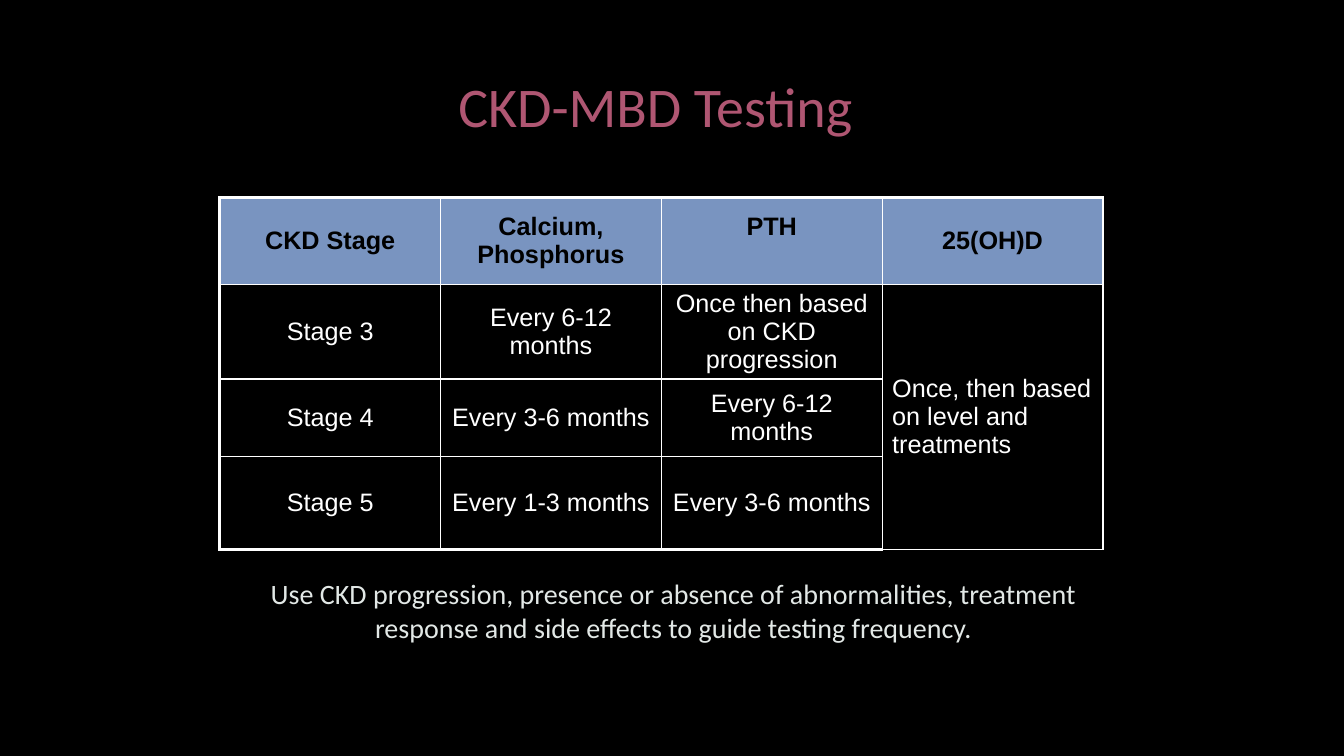
"""Build a slide with a table of CKD-MBD testing intervals."""
import dataclasses

import pptx
import pptx.dml.color
import pptx.enum.text
import pptx.oxml
import pptx.oxml.ns
import pptx.util

Inches = pptx.util.Inches
Pt = pptx.util.Pt
Align = pptx.enum.text.PP_ALIGN
Anchor = pptx.enum.text.MSO_ANCHOR


@dataclasses.dataclass(frozen=True)
class Theme:
    """Hold the colours, fonts and type sizes of the slide."""
    background: str = "000000"
    title: str = "AF5672"
    header_fill: str = "7994C0"
    header_text: str = "000000"
    cell_text: str = "FFFFFF"
    border: str = "FFFFFF"
    note: str = "E2E8E6"
    text_font: str = "Calibri"
    table_font: str = "Arial"
    title_size: int = 40
    table_size: int = 18
    note_size: int = 20
    outer_line: float = 2.25
    inner_line: float = 1


THEME = Theme()
ROWS = [
    ["CKD Stage", "Calcium, Phosphorus", "PTH", "25(OH)D"],
    ["Stage 3", "Every 6-12 months", "Once then based on CKD progression",
     "Once, then based on level and treatments"],
    ["Stage 4", "Every 3-6 months", "Every 6-12 months", ""],
    ["Stage 5", "Every 1-3 months", "Every 3-6 months", ""],
]
ROW_HEIGHTS = [0.86, 0.91, 0.77, 0.92]
COLUMN_WIDTH = 2.19
NOTE = ("Use CKD progression, presence or absence of abnormalities, "
        "treatment response and side effects to guide testing frequency.")


def set_attributes(target, values):
    """Set each named value on the target."""
    for name, value in values.items():
        setattr(target, name, value)


def rgb(colour):
    """Turn a hex string into a colour."""
    return pptx.dml.color.RGBColor.from_string(colour)


def write_text(frame, text, font, size, colour, bold=False, align=Align.CENTER):
    """Write one formatted paragraph into a text frame."""
    frame.word_wrap = True
    paragraph = frame.paragraphs[0]
    paragraph.text = text
    paragraph.alignment = align
    set_attributes(paragraph.font, {"name": font, "size": Pt(size), "bold": bold})
    paragraph.font.color.rgb = rgb(colour)


def place(shape, left, top, width, height):
    """Set the position and size of a shape in inches."""
    set_attributes(shape, {"left": Inches(left), "top": Inches(top),
                           "width": Inches(width), "height": Inches(height)})


def add_title(slide, text):
    """Fill and place the title placeholder."""
    title = slide.shapes.title
    place(title, 2.25, 0.42, 8.5, 1.25)
    title.text_frame.vertical_anchor = Anchor.MIDDLE
    write_text(title.text_frame, text, THEME.text_font, THEME.title_size, THEME.title)


def add_note(slide, text):
    """Add the note below the table."""
    note = slide.shapes.add_textbox(*map(Inches, (2.43, 5.67, 8.5, 0.77)))
    write_text(note.text_frame, text, THEME.text_font, THEME.note_size, THEME.note)


def set_borders(cell, outer_sides):
    """Draw the four cell borders, heavier on the outer sides."""
    properties = cell._tc.get_or_add_tcPr()
    for side in "LRTB":
        width = Pt(THEME.outer_line if side in outer_sides else THEME.inner_line)
        properties.append(pptx.oxml.parse_xml(
            f'<a:ln{side} {pptx.oxml.ns.nsdecls("a")} w="{width}"><a:solidFill>'
            f'<a:srgbClr val="{THEME.border}"/></a:solidFill></a:ln{side}>'))


def format_cell(cell, text, row, column):
    """Write and style one table cell."""
    last_row, last_column = len(ROWS) - 1, len(ROWS[0]) - 1
    edges = {"L": column == 0, "R": column == last_column,
             "T": row == 0, "B": row == last_row}
    set_borders(cell, [side for side, outer in edges.items() if outer])
    cell.vertical_anchor = Anchor.MIDDLE
    header = row == 0
    if header:
        cell.fill.solid()
        cell.fill.fore_color.rgb = rgb(THEME.header_fill)
    else:
        cell.fill.background()
    if text:
        align = Align.LEFT if column == last_column and not header else Align.CENTER
        colour = THEME.header_text if header else THEME.cell_text
        write_text(cell.text_frame, text, THEME.table_font, THEME.table_size,
                   colour, header, align)


def add_testing_table(slide):
    """Add the table of testing intervals by CKD stage."""
    column_count = len(ROWS[0])
    frame = slide.shapes.add_table(
        len(ROWS), column_count, Inches(2.18), Inches(1.96),
        Inches(COLUMN_WIDTH * column_count), Inches(sum(ROW_HEIGHTS)))
    table = frame.table
    set_attributes(table, {"first_row": False, "horz_banding": False})
    for column in table.columns:
        column.width = Inches(COLUMN_WIDTH)
    for row, height in zip(table.rows, ROW_HEIGHTS):
        row.height = Inches(height)
    for row, texts in enumerate(ROWS):
        for column, text in enumerate(texts):
            format_cell(table.cell(row, column), text, row, column)
    table.cell(0, 2).margin_bottom = Inches(0.33)
    table.cell(1, 3).merge(table.cell(3, 3))


def main():
    """Build and save the presentation."""
    presentation = pptx.Presentation()
    set_attributes(presentation, {"slide_width": Inches(13.33),
                                  "slide_height": Inches(7.5)})
    slide = presentation.slides.add_slide(presentation.slide_layouts[5])
    slide.background.fill.solid()
    slide.background.fill.fore_color.rgb = rgb(THEME.background)
    add_title(slide, "CKD-MBD Testing")
    add_testing_table(slide)
    add_note(slide, NOTE)
    presentation.save("out.pptx")


if __name__ == "__main__":
    main()
